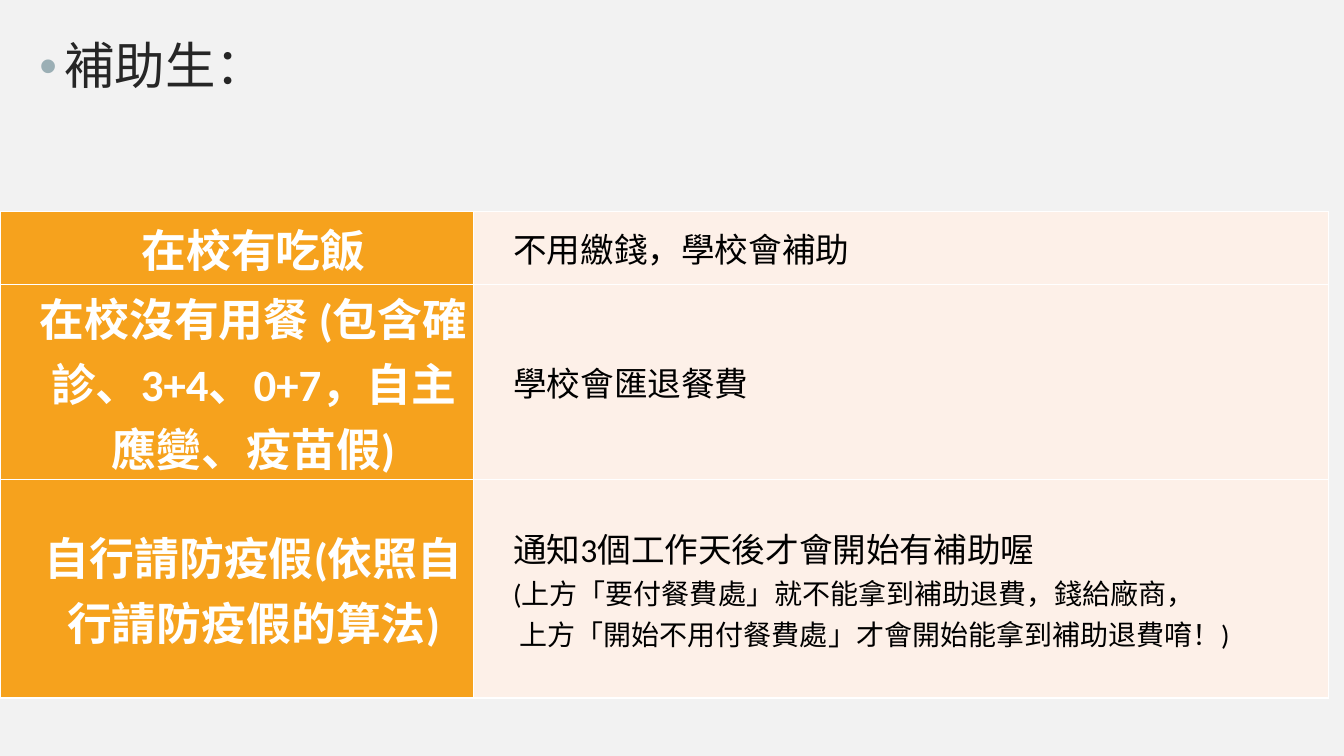
from lxml import etree
from pptx import Presentation
from pptx.dml.color import RGBColor
from pptx.enum.text import MSO_ANCHOR, PP_ALIGN
from pptx.oxml.ns import qn
from pptx.util import Inches, Pt

CENTER, LEFT = PP_ALIGN.CENTER, PP_ALIGN.LEFT
MIDDLE, TOP = MSO_ANCHOR.MIDDLE, MSO_ANCHOR.TOP
FONT = "Calibri"
COLORS = {
    "background": "F2F2F2", "heading": "262626", "bullet": "9BAFB5",
    "situation": "F6A21D", "rule": "FDF0E8", "white": "FFFFFF", "black": "000000",
}
COLUMN_WIDTHS = (4.7, 8.48)
ROW_HEIGHTS = (0.72, 1.68, 2.17)
COLUMN_STYLES = (
    {"fill": "situation", "color": "white", "bold": True, "align": CENTER, "sizes": (32,)},
    {"fill": "rule", "color": "black", "bold": False, "align": LEFT, "sizes": (24, 20)},
)
# Each cell is a tuple of paragraphs.
SUBSIDY_RULES = (
    (("在校有吃飯",), ("不用繳錢，學校會補助",)),
    (("在校沒有用餐 (包含確診、3+4、0+7，自主應變、疫苗假)",), ("學校會匯退餐費",)),
    (("自行請防疫假(依照自行請防疫假的算法)",),
     ("通知3個工作天後才會開始有補助喔",
      "(上方「要付餐費處」就不能拿到補助退費，錢給廠商，\n"
      " 上方「開始不用付餐費處」才會開始能拿到補助退費唷！)")),
)


def rgb(name):
    return RGBColor.from_string(COLORS[name])


def set_attributes(target, values):
    for name, value in values.items():
        setattr(target, name, value)


def write_paragraph(paragraph, text, size, color, bold=False):
    paragraph.text = text
    for run in paragraph.runs:
        set_attributes(run.font, {"name": FONT, "size": Pt(size), "bold": bold})
        run.font.color.rgb = rgb(color)


def set_indent(paragraph, margin, first_line=0):
    properties = paragraph._p.get_or_add_pPr()
    properties.set("marL", str(Inches(margin)))
    properties.set("indent", str(Inches(first_line)))
    return properties


def add_bullet(properties):
    bullet_color = etree.SubElement(properties, qn("a:buClr"))
    etree.SubElement(bullet_color, qn("a:srgbClr"), val=COLORS["bullet"])
    etree.SubElement(properties, qn("a:buFont"), typeface="Arial")
    etree.SubElement(properties, qn("a:buChar"), char="•")


def add_borders(cell):
    """Draws all four edges; they go before the fill in the cell properties."""
    properties = cell._tc.get_or_add_tcPr()
    for position, edge in enumerate(("a:lnL", "a:lnR", "a:lnT", "a:lnB")):
        line = etree.Element(qn(edge), w=str(Pt(1)))
        fill = etree.SubElement(line, qn("a:solidFill"))
        etree.SubElement(fill, qn("a:srgbClr"), val=COLORS["white"])
        properties.insert(position, line)


def fill_cell(cell, paragraphs, style):
    set_attributes(cell, {
        "margin_left": Inches(0.06), "margin_right": Inches(0.06),
        "margin_top": 0, "margin_bottom": 0, "vertical_anchor": MIDDLE,
    })
    cell.fill.solid()
    cell.fill.fore_color.rgb = rgb(style["fill"])
    add_borders(cell)
    frame = cell.text_frame
    for index, (text, size) in enumerate(zip(paragraphs, style["sizes"])):
        paragraph = frame.add_paragraph() if index else frame.paragraphs[0]
        write_paragraph(paragraph, text, size, style["color"], style["bold"])
        paragraph.alignment = style["align"]
        set_indent(paragraph, 0.33)


def add_rules_table(slide, left, top):
    table = slide.shapes.add_table(
        len(ROW_HEIGHTS), len(COLUMN_WIDTHS), Inches(left), Inches(top),
        Inches(sum(COLUMN_WIDTHS)), Inches(sum(ROW_HEIGHTS))).table
    set_attributes(table, {"first_row": False, "horz_banding": False})
    for column, width in zip(table.columns, COLUMN_WIDTHS):
        column.width = Inches(width)
    for row, height, contents in zip(table.rows, ROW_HEIGHTS, SUBSIDY_RULES):
        row.height = Inches(height)
        for cell, paragraphs, style in zip(row.cells, contents, COLUMN_STYLES):
            fill_cell(cell, paragraphs, style)


def place_heading(slide, left, top, width, height):
    body = slide.placeholders[1]
    set_attributes(body, {"left": Inches(left), "top": Inches(top),
                          "width": Inches(width), "height": Inches(height)})
    set_attributes(body.text_frame, {"vertical_anchor": TOP, "word_wrap": True})
    paragraph = body.text_frame.paragraphs[0]
    write_paragraph(paragraph, "補助生：", 36, "heading")
    set_attributes(paragraph, {"space_before": Pt(10), "line_spacing": 0.9})
    add_bullet(set_indent(paragraph, 0.25, -0.25))


def build_subsidy_slide(presentation):
    slide = presentation.slides.add_slide(presentation.slide_layouts[1])
    slide.background.fill.solid()
    slide.background.fill.fore_color.rgb = rgb("background")
    title = slide.shapes.title._element
    title.getparent().remove(title)
    place_heading(slide, 0.29, 0.36, 12.76, 5.92)
    add_rules_table(slide, 0, 2.1)


def main():
    presentation = Presentation()
    set_attributes(presentation, {"slide_width": Inches(13.33), "slide_height": Inches(7.5)})
    build_subsidy_slide(presentation)
    presentation.save("out.pptx")


if __name__ == "__main__":
    main()
